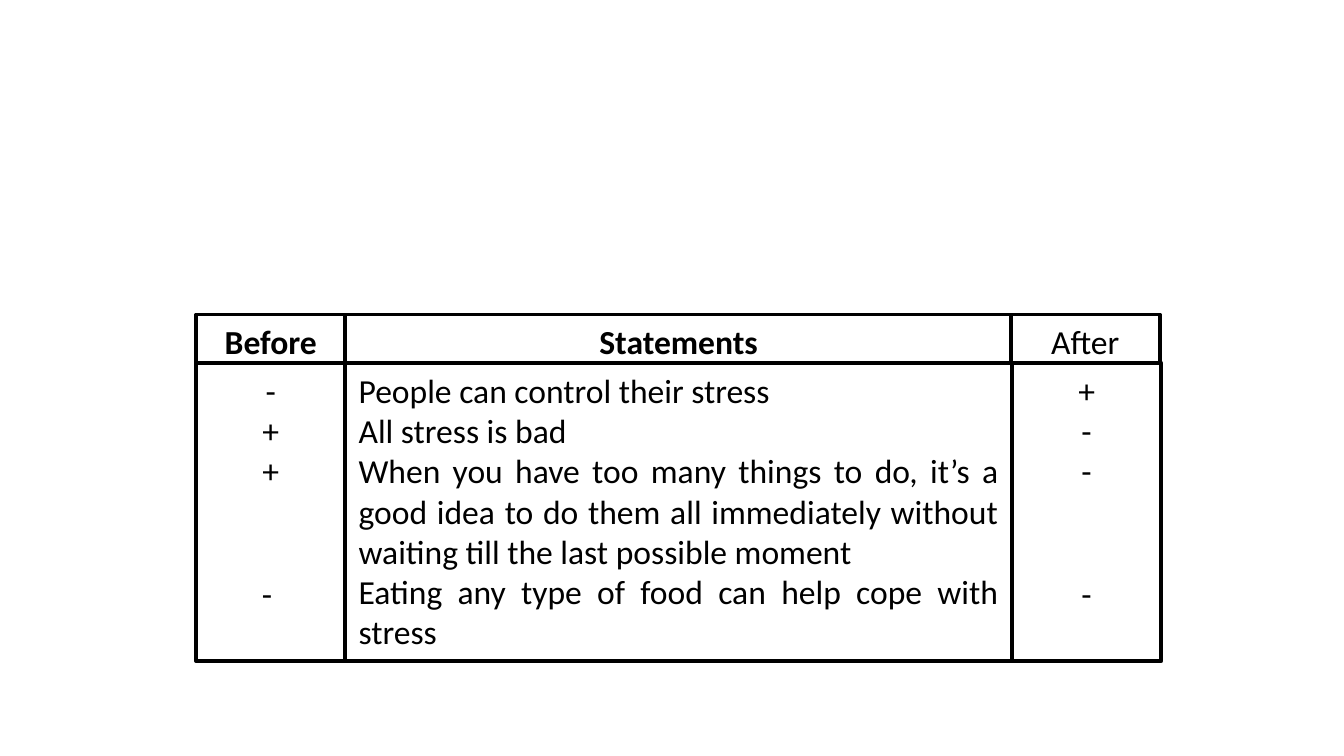
from pptx import Presentation
from pptx.dml.color import RGBColor
from pptx.enum.shapes import MSO_SHAPE as Shape
from pptx.enum.text import MSO_ANCHOR as Anchor, MSO_AUTO_SIZE as AutoSize, PP_ALIGN as Align
from pptx.util import Inches, Pt

BLACK = RGBColor(0, 0, 0)
WHITE = RGBColor(255, 255, 255)


class SlideBuilder:
    """Draws outlined text boxes in one style on the current slide."""

    font_name = "Calibri"
    font_size = Pt(18)
    line_width = Pt(2)

    def __init__(self, slide):
        self.slide = slide

    def box(self, left, top, width, height, lines, align=Align.CENTER, bold=False, last_gap=0):
        shape = self.slide.shapes.add_shape(
            Shape.RECTANGLE, Inches(left), Inches(top), Inches(width), Inches(height))
        shape.shadow.inherit = False
        shape.fill.solid()
        shape.fill.fore_color.rgb = WHITE
        shape.line.color.rgb = BLACK
        shape.line.width = self.line_width
        frame = shape.text_frame
        frame.word_wrap = True
        frame.auto_size = AutoSize.SHAPE_TO_FIT_TEXT
        frame.vertical_anchor = Anchor.TOP
        frame.text = "\n".join(lines)
        for paragraph in frame.paragraphs:
            paragraph.alignment = align
            font = paragraph.font
            font.name, font.size, font.bold = self.font_name, self.font_size, bold
            font.color.rgb = BLACK
        if last_gap:
            frame.paragraphs[-1].space_before = Pt(last_gap)


def main():
    presentation = Presentation()
    presentation.slide_width = Inches(10)
    presentation.slide_height = Inches(10 * 9 / 16)
    slide = presentation.slides.add_slide(presentation.slide_layouts[6])
    builder = SlideBuilder(slide)

    side_width, middle_width = 1.11, 4.96
    headings = [
        (1.46, side_width, "Before", True),
        (2.57, middle_width, "Statements", True),
        (7.52, side_width, "After", False),
    ]
    for left, width, heading, bold in headings:
        builder.box(left, 2.34, width, 0.4, [heading], bold=bold)

    statements = [
        "People can control their stress",
        "All stress is bad",
        "When you have too many things to do, it’s a good idea to do them all "
        "immediately without waiting till the last possible moment",
        "Eating any type of food can help cope with stress",
    ]
    two_lines = 44
    columns = [
        (2.57, middle_width, statements, Align.JUSTIFY, 0),
        (1.46, side_width, ["-", "+", "+", "- "], Align.CENTER, two_lines),
        (7.53, side_width, ["+", "-", "-", "-"], Align.CENTER, two_lines),
    ]
    for left, width, lines, align, gap in columns:
        builder.box(left, 2.7, width, 2.22, lines, align, last_gap=gap)

    presentation.save("out.pptx")


if __name__ == "__main__":
    main()
